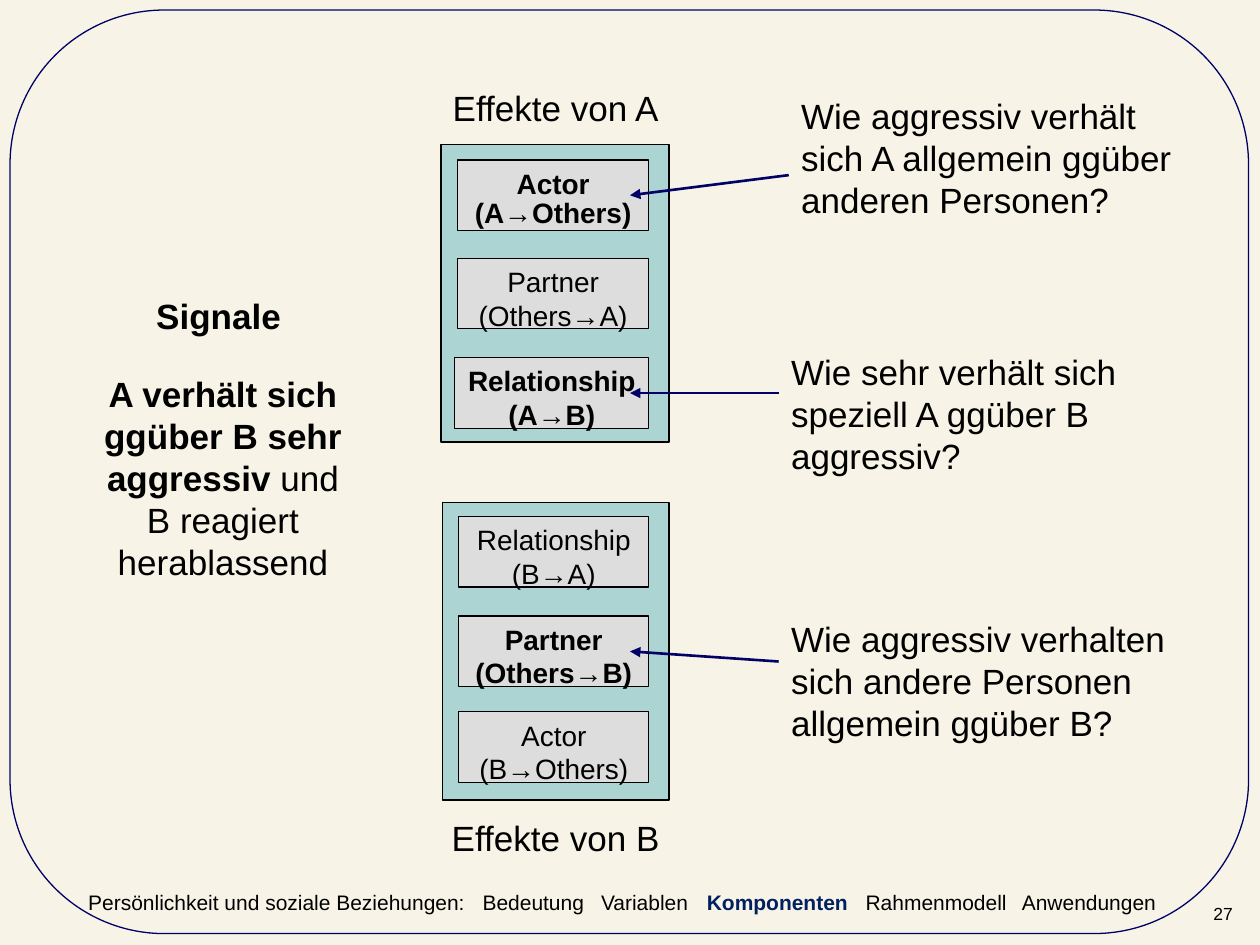
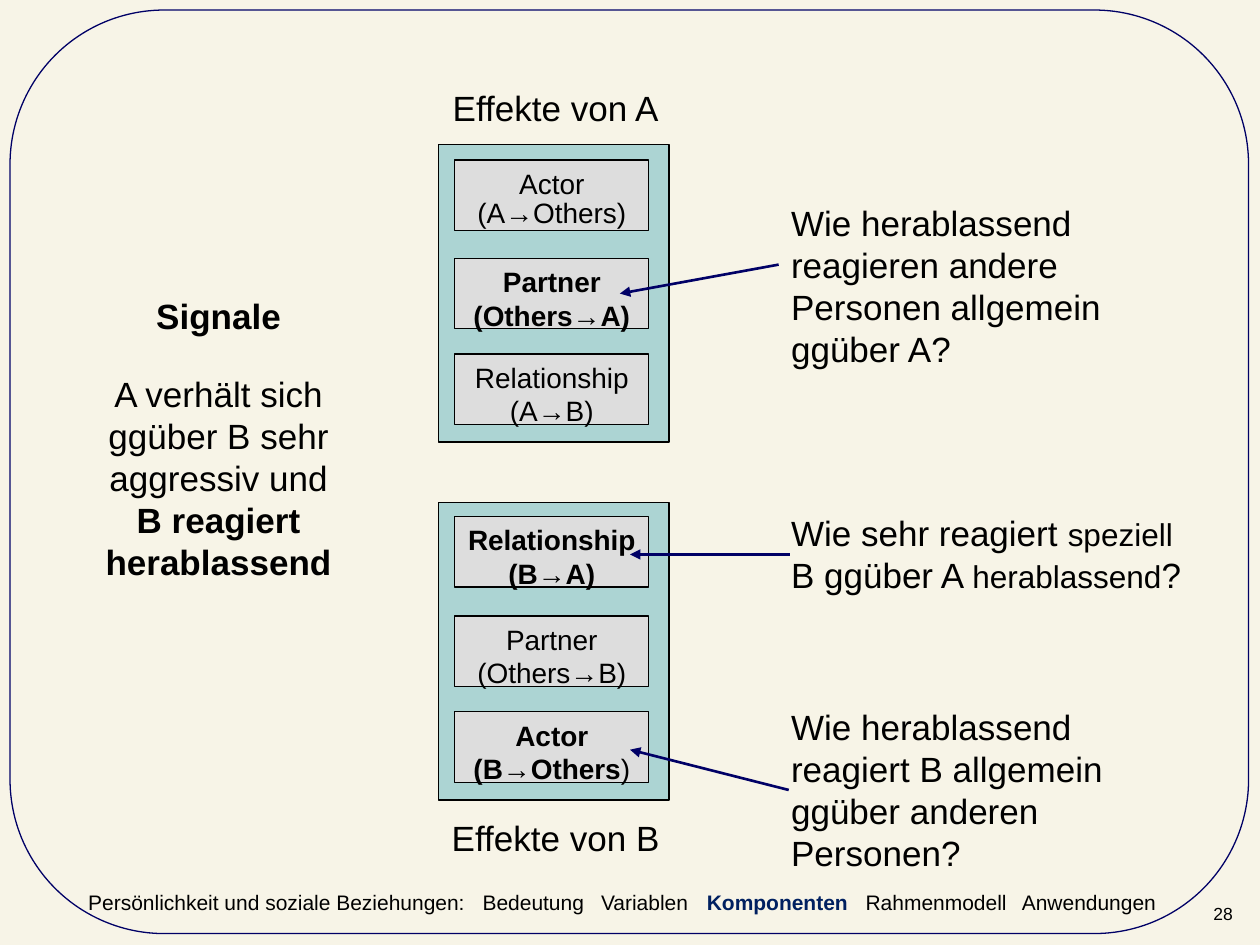
"""Build two slides on actor, partner and relationship effects between A and B."""
import dataclasses

import lxml.etree
import pptx
import pptx.dml.color
import pptx.enum.shapes
import pptx.enum.text
import pptx.oxml.ns
import pptx.util

PX = 9144
SHAPE = pptx.enum.shapes.MSO_SHAPE
CENTER = pptx.enum.text.PP_ALIGN.CENTER
LEFT = pptx.enum.text.PP_ALIGN.LEFT
TOP = pptx.enum.text.MSO_ANCHOR.TOP
BOTTOM = pptx.enum.text.MSO_ANCHOR.BOTTOM


@dataclasses.dataclass(frozen=True)
class Theme:
    font: str = "Arial"
    paper: str = "F7F4E7"
    ink: str = "000000"
    navy: str = "000066"
    active: str = "002060"
    panel: str = "ACD4D3"
    card: str = "DDDDDD"
    body: int = 20
    aside: int = 18
    label: int = 16
    footer: int = 12
    number: int = 10
    hairline: float = 0.75
    arrow: float = 1.5


THEME = Theme()


@dataclasses.dataclass(frozen=True)
class Span:
    text: str
    bold: bool | None = None
    size: int | None = None
    color: str | None = None


@dataclasses.dataclass(frozen=True)
class Card:
    lines: tuple
    top: int
    bold: bool = False
    left: int | None = None
    spacing: float | None = None


PANEL_RIGHT, CARD_RIGHT = 531, 515
PANEL_TOP_A, PANEL_TOP_B, PANEL_HEIGHT = 115, 399, 236
CARD_INSET, CARD_HEIGHT = 13, 56
SECTION_TABS = (313, 407, 491, 617, 741)


def px(length):
    return pptx.util.Emu(length * PX)


def rgb(code):
    return pptx.dml.color.RGBColor.from_string(code)


def style_font(font, size=None, bold=None, color=None):
    if size is not None:
        font.size = pptx.util.Pt(size)
    if bold is not None:
        font.bold = bold
    if color is not None:
        font.color.rgb = rgb(color)


def write(box, paragraphs, size, bold=False, align=LEFT, anchor=TOP, inset=(10, 5)):
    frame = box.text_frame
    frame.word_wrap = True
    frame.vertical_anchor = anchor
    frame.margin_left = frame.margin_right = px(inset[0])
    frame.margin_top = frame.margin_bottom = px(inset[1])
    for index, spans in enumerate(paragraphs):
        para = frame.add_paragraph() if index else frame.paragraphs[0]
        para.alignment = align
        para.font.name = THEME.font
        style_font(para.font, size, bold, THEME.ink)
        for span in [Span(spans)] if isinstance(spans, str) else spans:
            run = para.add_run()
            run.text = span.text
            style_font(run.font, span.size, span.bold, span.color)
    return frame


def add_text(page, area, paragraphs, size=THEME.body, **options):
    box = page.shapes.add_textbox(*map(px, area))
    return write(box, paragraphs, size, **options)


def add_box(page, kind, area, fill, line):
    box = page.shapes.add_shape(kind, *map(px, area))
    box.shadow.inherit = False
    if fill:
        box.fill.solid()
        box.fill.fore_color.rgb = rgb(fill)
    else:
        box.fill.background()
    box.line.color.rgb = rgb(line)
    box.line.width = pptx.util.Pt(THEME.hairline)
    return box


def add_arrow(page, start, end):
    arrow = page.shapes.add_connector(
        pptx.enum.shapes.MSO_CONNECTOR.STRAIGHT, *map(px, start + end))
    arrow.line.color.rgb = rgb(THEME.navy)
    arrow.line.width = pptx.util.Pt(THEME.arrow)
    qn = pptx.oxml.ns.qn
    properties = arrow.element.spPr
    lxml.etree.SubElement(properties.find(qn("a:ln")), qn("a:tailEnd"), type="triangle")
    lxml.etree.SubElement(properties, qn("a:effectLst"))


def add_panel(page, left, top, cards):
    add_box(page, SHAPE.RECTANGLE, (left, top, PANEL_RIGHT - left, PANEL_HEIGHT),
            THEME.panel, THEME.ink)
    for card in cards:
        card_left = card.left or left + CARD_INSET
        box = add_box(page, SHAPE.RECTANGLE,
                      (card_left, card.top, CARD_RIGHT - card_left, CARD_HEIGHT),
                      THEME.card, THEME.ink)
        frame = write(box, card.lines, THEME.label, bold=card.bold, align=CENTER,
                      inset=(0, 5))
        if card.spacing:
            frame.paragraphs[-1].line_spacing = card.spacing


def add_question(page, area, spans, start, end):
    add_text(page, area, [spans])
    add_arrow(page, start, end)


def set_tabs(para, positions):
    qn = pptx.oxml.ns.qn
    stops = lxml.etree.Element(qn("a:tabLst"))
    for position in positions:
        lxml.etree.SubElement(stops, qn("a:tab"), pos=str(px(position)), algn="l")
    para.font._element.addprevious(stops)


def add_footer(page, number):
    sections = [
        Span("Persönlichkeit und soziale Beziehungen:\tBedeutung\tVariablen\t"),
        Span("Komponenten", bold=True, color=THEME.active),
        Span("\tRahmenmodell\tAnwendungen"),
    ]
    frame = add_text(page, (69, 705, 875, 22), [sections], THEME.footer, inset=(1, 1))
    set_tabs(frame.paragraphs[0], SECTION_TABS)
    add_text(page, (962, 715, 38, 19), [str(number)], THEME.number,
             anchor=BOTTOM, inset=(1, 1))


def add_page(deck, number, signal, signal_width):
    page = deck.slides.add_slide(deck.slide_layouts[6])
    page.background.fill.solid()
    page.background.fill.fore_color.rgb = rgb(THEME.paper)
    border = add_box(page, SHAPE.ROUNDED_RECTANGLE, (8, 8, 983, 733), None, THEME.navy)
    border.adjustments[0] = 0.167
    add_text(page, (67, 229, 213, 43), ["Signale"], bold=True, align=CENTER)
    add_text(page, (67, 291, signal_width, 177), [signal], align=CENTER)
    for person, top in (("A", 64), ("B", 643)):
        add_text(page, (327, top, 228, 43), [f"Effekte von {person}"], align=CENTER)
    add_footer(page, number)
    return page


def build_aggression_page(deck):
    signal = [Span("A verhält sich ggüber B sehr aggressiv", bold=True),
              Span(" und B reagiert herablassend")]
    page = add_page(deck, 27, signal, 220)
    add_panel(page, 350, PANEL_TOP_A, [
        Card(("Actor", "(A→Others)"), 127, bold=True, spacing=0.9),
        Card(("Partner", "(Others→A)"), 205),
        Card(("Relationship (A→B)",), 284, bold=True, left=361),
    ])
    add_panel(page, 351, PANEL_TOP_B, [
        Card(("Relationship (B→A)",), 410),
        Card(("Partner", "(Others→B)"), 489, bold=True),
        Card(("Actor", "(B→Others)"), 565),
    ])
    add_question(page, (626, 70, 339, 110),
                 "Wie aggressiv verhält sich A allgemein ggüber anderen Personen?",
                 (626, 139), (500, 155))
    add_question(page, (618, 273, 339, 110),
                 "Wie sehr verhält sich speziell A ggüber B aggressiv?",
                 (618, 312), (500, 312))
    add_question(page, (618, 485, 339, 110),
                 "Wie aggressiv verhalten sich andere Personen allgemein ggüber B?",
                 (618, 525), (500, 517))


def build_condescension_page(deck):
    signal = [Span("A verhält sich ggüber B sehr aggressiv und "),
              Span("B reagiert herablassend", bold=True)]
    page = add_page(deck, 28, signal, 213)
    add_panel(page, 348, PANEL_TOP_A, [
        Card(("Actor", "(A→Others)"), 127, spacing=0.9),
        Card(("Partner", "(Others→A)"), 205, bold=True),
        Card(("Relationship (A→B)",), 281),
    ])
    add_panel(page, 348, PANEL_TOP_B, [
        Card(("Relationship (B→A)",), 410, bold=True),
        Card(("Partner", "(Others→B)"), 489),
        Card(("Actor", [Span("(B→Others"), Span(")", bold=False)]), 565, bold=True),
    ])
    add_question(page, (618, 155, 339, 143),
                 "Wie herablassend reagieren andere Personen allgemein ggüber A?",
                 (618, 210), (492, 233))
    add_question(page, (618, 401, 347, 77),
                 [Span("Wie sehr reagiert "), Span("speziell ", size=THEME.aside),
                  Span("B ggüber A "), Span("herablassend", size=THEME.aside), Span("?")],
                 (627, 440), (500, 440))
    add_question(page, (618, 555, 339, 143),
                 "Wie herablassend reagiert B allgemein ggüber anderen Personen?",
                 (626, 627), (500, 595))


def main():
    deck = pptx.Presentation()
    deck.slide_width, deck.slide_height = px(1000), px(750)
    build_aggression_page(deck)
    build_condescension_page(deck)
    deck.save("out.pptx")


if __name__ == "__main__":
    main()
